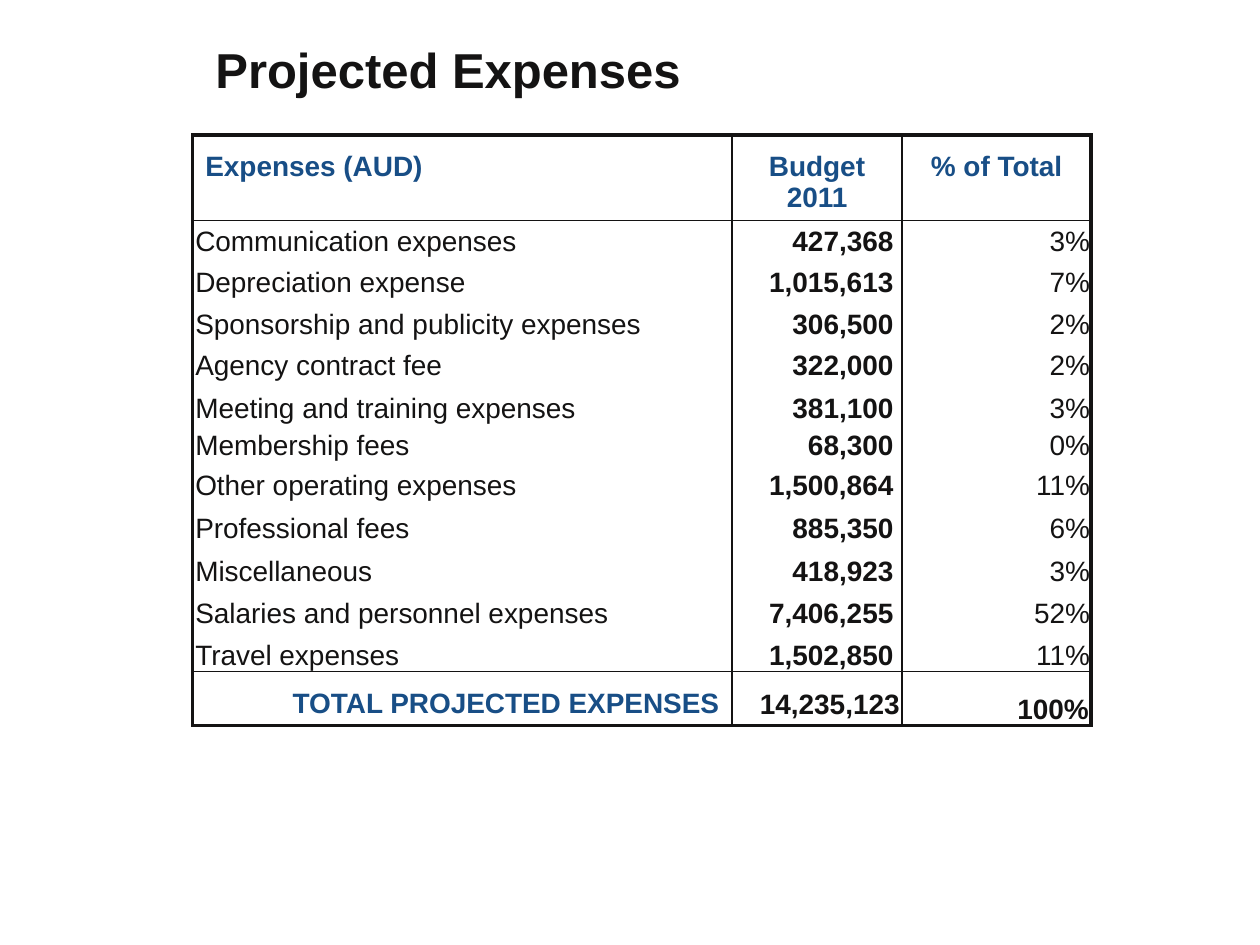
from lxml.etree import SubElement
from pptx import Presentation
from pptx.dml.color import RGBColor
from pptx.enum.text import MSO_ANCHOR, PP_ALIGN
from pptx.oxml.ns import qn
from pptx.util import Inches, Pt

INK, BLUE = "141313", "184E86"
THIN, THICK = 1, 2.25
COL_WIDTHS = [4.28, 1.35, 1.5]
ROW_HEIGHTS = [0.68, 0.29, 0.33, 0.33, 0.33, 0.34, 0.29, 0.32, 0.34, 0.34, 0.34, 0.33, 0.43]
HEADER = ["Expenses (AUD)", "Budget\n2011", "% of Total"]
EXPENSES = [
    ["Communication expenses", "427,368", "3%"],
    ["Depreciation expense", "1,015,613", "7%"],
    ["Sponsorship and publicity expenses", "306,500", "2%"],
    ["Agency contract fee", "322,000", "2%"],
    ["Meeting and training expenses", "381,100", "3%"],
    ["Membership fees", "68,300", "0%"],
    ["Other operating expenses", "1,500,864", "11%"],
    ["Professional fees", "885,350", "6%"],
    ["Miscellaneous", "418,923", "3%"],
    ["Salaries and personnel expenses", "7,406,255", "52%"],
    ["Travel expenses", "1,502,850", "11%"],
]
TOTAL = ["TOTAL PROJECTED EXPENSES", "14,235,123", "100%"]
LEFT, CENTER, RIGHT = PP_ALIGN.LEFT, PP_ALIGN.CENTER, PP_ALIGN.RIGHT


def rgb(color):
    return RGBColor.from_string(color)


def style(tf, size, color, bold, align):
    for p in tf.paragraphs:
        p.alignment = align
        p.font.name = "Arial"
        p.font.size = Pt(size)
        p.font.bold = bold
        p.font.color.rgb = rgb(color)


def set_borders(cell, left, right, top, bottom):
    tc_pr = cell._tc.get_or_add_tcPr()
    for side, width in zip("LRTB", (left, right, top, bottom)):
        ln = SubElement(tc_pr, qn(f"a:ln{side}"), w=str(Pt(width)))
        if width:
            fill = SubElement(ln, qn("a:solidFill"))
            SubElement(fill, qn("a:srgbClr"), val=INK)
        else:
            SubElement(ln, qn("a:noFill"))


def fill_cell(cell, text, color, bold, align, anchor, margins):
    cell.text = text
    cell.vertical_anchor = anchor
    left, top, right, bottom = map(Inches, margins)
    cell.margin_left, cell.margin_top = left, top
    cell.margin_right, cell.margin_bottom = right, bottom
    style(cell.text_frame, 16, color, bold, align)
    cell.fill.background()


def add_title(s, text):
    title = s.shapes.title
    title.left, title.top = Inches(1.61), Inches(0.21)
    title.width, title.height = Inches(5.67), Inches(0.67)
    tf = title.text_frame
    tf.text = text
    tf.vertical_anchor = MSO_ANCHOR.MIDDLE
    style(tf, 28, INK, True, LEFT)


def cell_format(row, col, last):
    if row == 0:
        return BLUE, True, CENTER if col else LEFT, MSO_ANCHOR.TOP, (0.1, 0.13, 0.1, 0.05)
    if row == last:
        margins = [(0.1, 0.05, 0.1, 0.05), (0.02, 0, 0.02, 0.04), (0.02, 0, 0.02, 0)][col]
        return INK if col else BLUE, True, RIGHT, MSO_ANCHOR.BOTTOM, margins
    margins = [(0.02, 0, 0.02, 0), (0.01, 0.01, 0.07, 0), (0.01, 0.01, 0.01, 0)][col]
    return INK, col == 1, RIGHT if col else LEFT, MSO_ANCHOR.BOTTOM, margins


def add_expense_table(s, rows):
    last = len(rows) - 1
    frame = s.shapes.add_table(len(rows), len(COL_WIDTHS), Inches(1.53), Inches(1.07),
                               Inches(sum(COL_WIDTHS)), Inches(sum(ROW_HEIGHTS)))
    table = frame.table
    table.first_row = table.horz_banding = False
    for column, width in zip(table.columns, COL_WIDTHS):
        column.width = Inches(width)
    for row, height in zip(table.rows, ROW_HEIGHTS):
        row.height = Inches(height)
    for i, values in enumerate(rows):
        top = {0: THICK, 1: THIN, last: THIN}.get(i, 0)
        bottom = {0: THIN, last - 1: THIN, last: THICK}.get(i, 0)
        for j, text in enumerate(values):
            cell = table.cell(i, j)
            set_borders(cell, THIN if j else THICK, THICK if j == 2 else THIN, top, bottom)
            fill_cell(cell, text, *cell_format(i, j, last))


def main():
    prs = Presentation()
    prs.slide_width, prs.slide_height = Inches(10), Inches(7.5)
    s = prs.slides.add_slide(prs.slide_layouts[5])
    add_title(s, "Projected Expenses")
    add_expense_table(s, [HEADER, *EXPENSES, TOTAL])
    prs.save("out.pptx")


if __name__ == "__main__":
    main()
